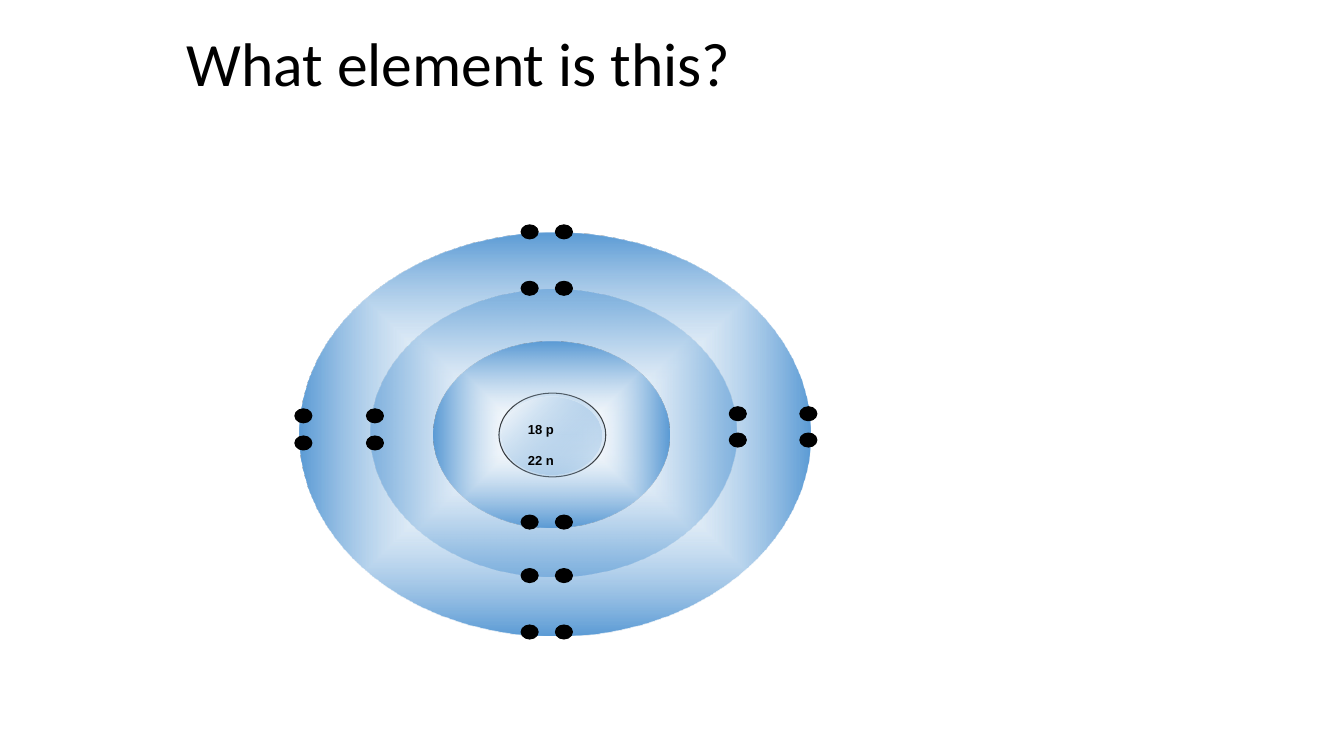
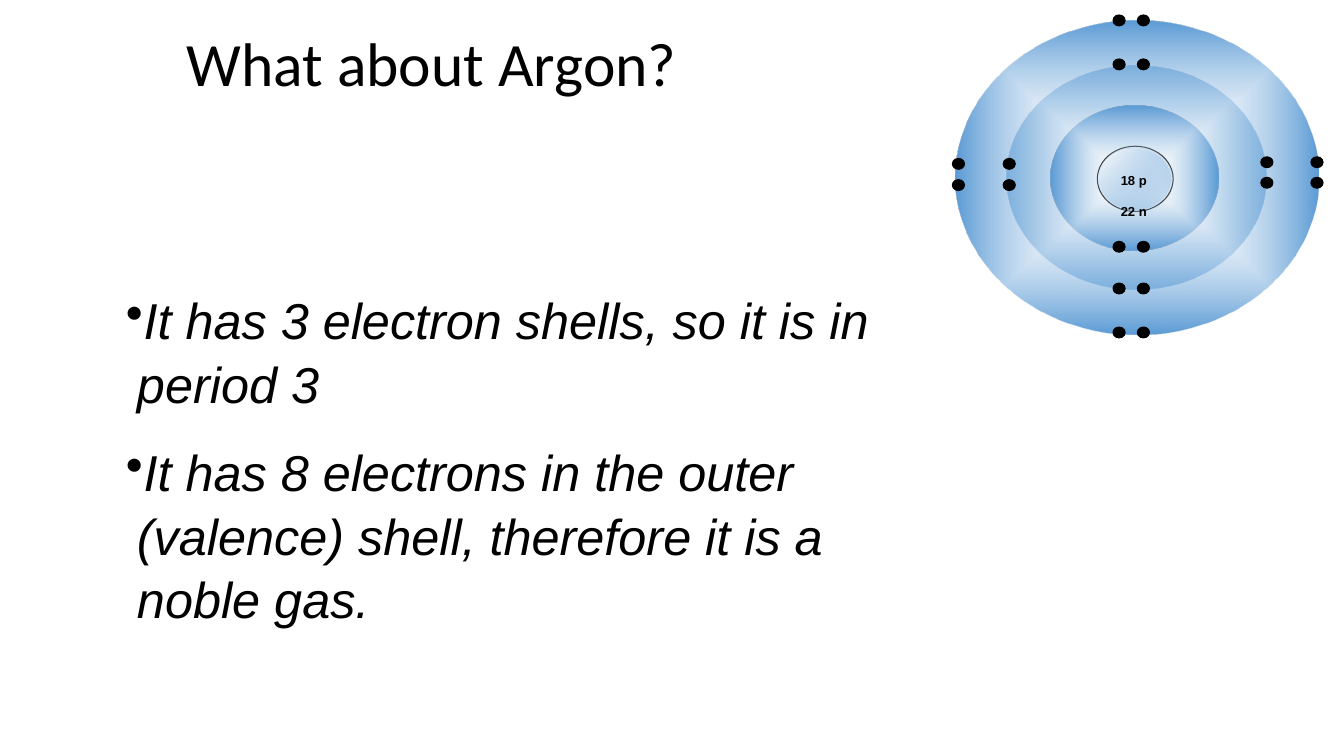
from itertools import product
from pptx import Presentation
from pptx.dml.color import RGBColor
from pptx.enum.shapes import MSO_SHAPE
from pptx.enum.text import MSO_ANCHOR, PP_ALIGN
from pptx.oxml import parse_xml
from pptx.oxml.ns import nsdecls, qn
from pptx.util import Pt

HUES = {"ink": "000000", "pale": "FFFFFF", "blue": "5B9BD5"}
TITLE = {"name": "Calibri", "size": Pt(44), "bold": False}
BODY = {"name": "Arial", "size": Pt(36), "italic": True}
LABEL = {"name": "Arial", "size": Pt(16), "bold": True}

CENTRE = '<a:path path="shape"><a:fillToRect l="50000" t="50000" r="50000" b="50000"/></a:path>'
SLOPE = '<a:lin ang="2700000" scaled="1"/>'
RINGS = [
    ((51.1, 40.3, 261.4, 205.2), (6, 100), CENTRE, False),
    ((0, 0, 365, 287.3), (0, 100), CENTRE, False),
    ((142.6, 114.5, 76.3, 59.8), (100, 6), SLOPE, True),
    ((95.8, 77.8, 168.5, 132.5), (0, 100), CENTRE, False),
    ((144.7, 116.6, 71.3, 56.2), (100, 6), SLOPE, False),
]
DOTS = [
    *product((164.5, 189), (-0.7, 39.6, 206.6, 244.8, 285.1)),
    *product((2.9, 54), (130.7, 150.1)),
    *product((313.2, 363.6), (129.2, 148)),
]
DOT = (12.2, 10)


class Deck:
    def __init__(self):
        self.prs = Presentation()
        self.prs.slide_width, self.prs.slide_height = Pt(960), Pt(540)
        self.slide = None

    def style(self, run, form):
        for key, value in form.items():
            setattr(run.font, key, value)
        run.font.color.rgb = RGBColor.from_string(HUES["ink"])

    def page(self, text):
        self.slide = self.prs.slides.add_slide(self.prs.slide_layouts[5])
        title = self.slide.shapes.title
        place = {"left": 126, "top": 5.76, "width": 576, "height": 84.24}
        for key, value in place.items():
            setattr(title, key, Pt(value))
        frame = title.text_frame
        frame.text = text
        frame.word_wrap = True
        frame.vertical_anchor = MSO_ANCHOR.MIDDLE
        para = frame.paragraphs[0]
        para.alignment = PP_ALIGN.LEFT
        para.line_spacing = 0.9
        self.style(para.runs[0], TITLE)

    def text(self, box, lines, form, lifts=None, bullet=None, pitch=None):
        frame = self.slide.shapes.add_textbox(*map(Pt, box)).text_frame
        frame.word_wrap = True
        for i, line in enumerate(lines):
            para = frame.paragraphs[0] if i == 0 else frame.add_paragraph()
            run = para.add_run()
            run.text = line
            self.style(run, form)
            para.line_spacing = pitch
            para.space_before = Pt(0)
            props = para._p.get_or_add_pPr()
            gap = props.find(qn("a:spcBef"))
            gap.remove(gap[0])
            gap.append(parse_xml(f'<a:spcPct {nsdecls("a")} val="50000"/>'))
            if lifts:
                run._r.get_or_add_rPr().set("baseline", str(lifts[i] * 1000))
            if bullet:
                props.set("marL", str(Pt(8)))
                props.set("indent", str(Pt(-8)))
                props.append(parse_xml(f'<a:buChar {nsdecls("a")} char="{bullet}"/>'))

    def oval(self, box, line):
        shape = self.slide.shapes.add_shape(MSO_SHAPE.OVAL, *map(Pt, box))
        shape.shadow.inherit = False
        if line:
            shape.line.color.rgb = RGBColor.from_string(HUES["ink"])
            shape.line.width = Pt(0.75)
        else:
            shape.line.fill.background()
        return shape

    def ring(self, box, alphas, path, line):
        shape = self.oval(box, line)
        shape.fill.background()
        stops = "".join(
            f'<a:gs pos="{pos}"><a:srgbClr val="{HUES[hue]}">'
            f'<a:alpha val="{alpha * 1000}"/></a:srgbClr></a:gs>'
            for pos, hue, alpha in zip((0, 100000), ("pale", "blue"), alphas)
        )
        grad = parse_xml(
            f'<a:gradFill {nsdecls("a")} rotWithShape="1">'
            f"<a:gsLst>{stops}</a:gsLst>{path}</a:gradFill>"
        )
        props = shape._element.spPr
        props.replace(props.find(qn("a:noFill")), grad)

    def dot(self, box):
        fill = self.oval(box, True).fill
        fill.solid()
        fill.fore_color.rgb = RGBColor.from_string(HUES["ink"])

    def atom(self, left, top, wide=1, high=1):
        def fit(x, y, w, h):
            return left + x * wide, top + y * high, w * wide, h * high

        for box, alphas, path, line in RINGS:
            self.ring(fit(*box), alphas, path, line)
        for x, y in DOTS:
            self.dot(fit(x - DOT[0] / 2, y - DOT[1] / 2, *DOT))
        self.text(fit(156.2, 121, 123.8, 114.5), ["18 p", "22 n"], LABEL, lifts=(-23, 24))


def main():
    deck = Deck()
    deck.page("What element is this?")
    deck.atom(213.84, 166.32)
    deck.page("What about Argon?")
    deck.text(
        (82.8, 200.9, 599.8, 247),
        [
            "It has 3 electron shells, so it is in period 3",
            "It has 8 electrons in the outer (valence) shell, therefore it is a noble gas.",
        ],
        BODY,
        bullet="•",
        pitch=1.05,
    )
    deck.atom(682.56, 15.12, 0.71, 0.78)
    deck.prs.save("out.pptx")


if __name__ == "__main__":
    main()
